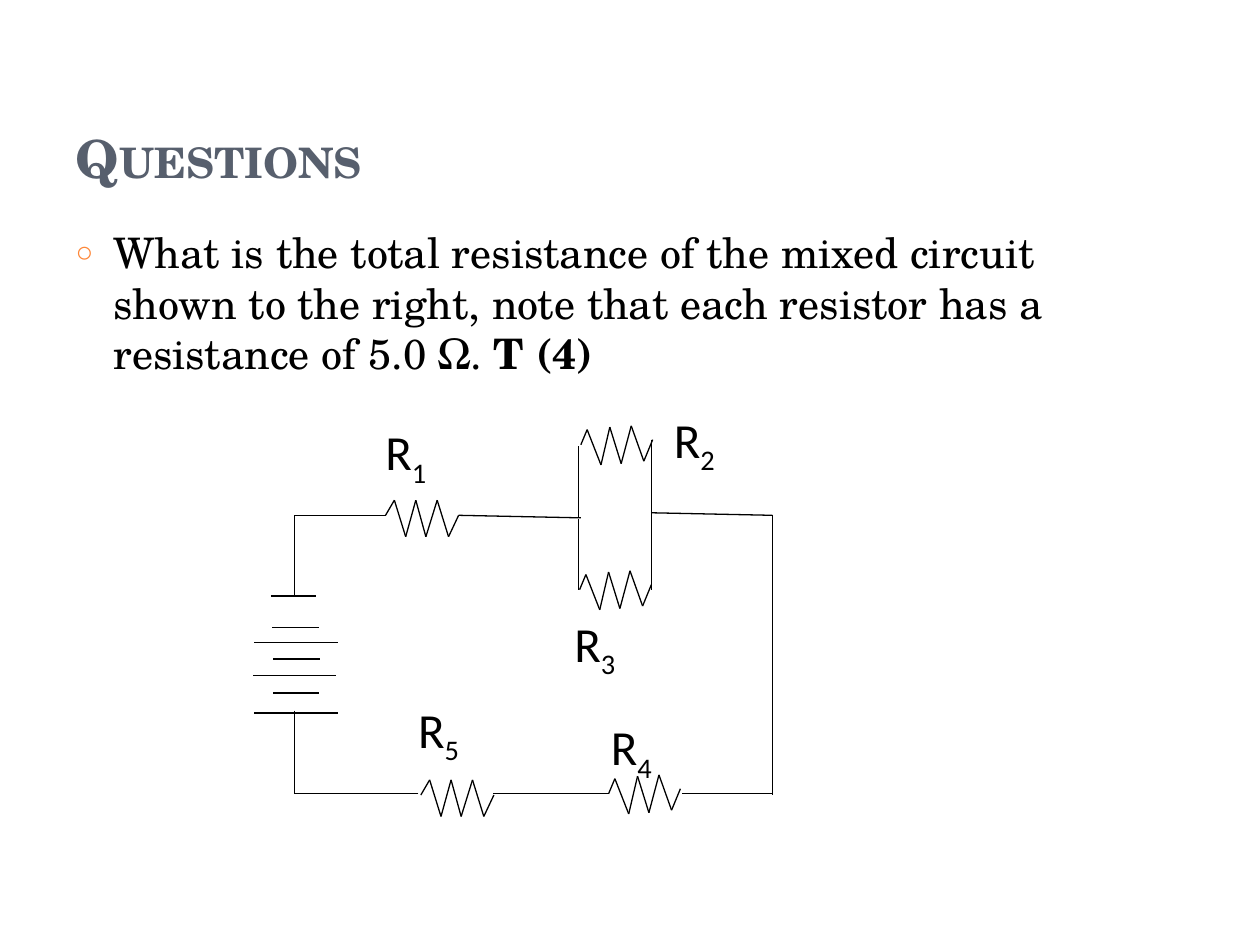
from itertools import pairwise

from lxml import etree
from pptx import Presentation
from pptx.dml.color import RGBColor
from pptx.enum import shapes, text
from pptx.oxml.ns import qn
from pptx.util import Pt

PX = 9144  # 100 px to the inch
INK = "000000"
SERIF, SANS = "TeX Gyre Schola", "Calibri"

# Content
TITLE = "Questions"
BODY = [
    ("What is the total resistance of the mixed circuit shown to the right, "
     "note that each resistor has a resistance of 5.0 Ω. ", False),
    ("T (4)", True),
]
LABELS = {"1": (296, 330), "2": (525, 320), "3": (446, 482),
          "4": (475, 564), "5": (322, 550)}
SIDE = (79, 77)

# Zigzag outlines, measured from the left end of a resistor
FLAT = [(0, 0), (7, -12), (16, 17), (24, -12), (32, 17), (41, -12), (50, 17), (58, 0)]
TILT = [(0, 0), (5, -12), (16, 16), (23, -14), (32, 15), (40, -15), (50, 13), (57, -4)]
ZIGZAGS = [(306, 409, FLAT), (461, 353, TILT), (460, 468, TILT),
           (483, 630, TILT), (334, 631, FLAT)]

# Wires as x1, y1, x2, y2
WIRES = [
    (234, 409, 306, 409), (364, 409, 461, 411),  # top
    (459, 354, 459, 410), (459, 412, 459, 468), (517, 349, 517, 468),  # branches
    (517, 407, 613, 409), (613, 409, 613, 631),  # right
    (613, 630, 541, 630), (483, 630, 391, 630), (332, 630, 234, 630),  # bottom
    (234, 409, 234, 473), (234, 564, 234, 630),  # left
]
# Battery plates as left, y, width
PLATES = [(215, 473, 36), (216, 498, 37), (202, 510, 66), (217, 523, 37),
          (201, 536, 66), (217, 550, 36), (202, 566, 66)]


def rgb(code):
    return RGBColor.from_string(code)


def px(*vals):
    return [v * PX for v in vals]


def put(obj, vals):
    for key, val in vals.items():
        setattr(obj, key, val)


def write(para, words, size, face, color=INK, bold=False):
    run = para.add_run()
    run.text = words
    put(run.font, {"size": Pt(size), "name": face, "bold": bold})
    run.font.color.rgb = rgb(color)
    return run


def place(holder, box, anchor):
    put(holder, dict(zip(("left", "top", "width", "height"), px(*box))))
    put(holder.text_frame, {"auto_size": text.MSO_AUTO_SIZE.NONE,
                            "vertical_anchor": anchor, "word_wrap": True})
    para = holder.text_frame.paragraphs[0]
    para.alignment = text.PP_ALIGN.LEFT
    return para


def line(slide, x1, y1, x2, y2):
    wire = slide.shapes.add_connector(
        shapes.MSO_CONNECTOR.STRAIGHT, *px(x1, y1, x2, y2))
    wire.line.color.rgb = rgb(INK)
    wire.line.width = Pt(0.75)
    etree.SubElement(wire._element.spPr, qn("a:effectLst"))


def bullet(para):
    props = para._p.get_or_add_pPr()
    put_xml = {"marL": px(30)[0], "indent": px(-30)[0]}
    for key, val in put_xml.items():
        props.set(key, str(val))
    tint = etree.SubElement(props, qn("a:buClr"))
    etree.SubElement(tint, qn("a:srgbClr"), val="FE8637")
    etree.SubElement(props, qn("a:buSzPct"), val="70000")
    etree.SubElement(props, qn("a:buChar"), char="○")


def label(slide, num, spot):
    box = slide.shapes.add_shape(
        shapes.MSO_SHAPE.RECTANGLE, *px(*spot, *SIDE))
    box.shadow.inherit = False
    box.fill.solid()
    box.fill.fore_color.rgb = rgb("FFFFFF")
    box.line.fill.background()
    put(box.text_frame, {"word_wrap": True,
                         "vertical_anchor": text.MSO_ANCHOR.TOP})
    para = box.text_frame.paragraphs[0]
    put(para, {"alignment": text.PP_ALIGN.LEFT, "space_after": Pt(10)})
    write(para, "R", 28, SANS)
    sub = write(para, num, 28, SANS)
    sub._r.get_or_add_rPr().set("baseline", "-25000")


def main():
    deck = Presentation()
    deck.slide_width, deck.slide_height = px(1000, 750)
    slide = deck.slides.add_slide(deck.slide_layouts[1])
    head, body = slide.placeholders

    # Title in small capitals
    para = place(head, (50, 30, 817, 125), text.MSO_ANCHOR.BOTTOM)
    run = write(para, TITLE, 30, SERIF, "575F6D", True)
    run._r.get_or_add_rPr().set("cap", "small")

    # Question
    para = place(body, (50, 175, 817, 533), text.MSO_ANCHOR.TOP)
    para.space_before = Pt(6)
    bullet(para)
    for words, bold in BODY:
        write(para, words, 24, SERIF, bold=bold)

    # Circuit
    for num, spot in LABELS.items():
        label(slide, num, spot)
    for left, top, outline in ZIGZAGS:
        for (x1, y1), (x2, y2) in pairwise(outline):
            line(slide, left + x1, top + y1, left + x2, top + y2)
    for ends in WIRES:
        line(slide, *ends)
    for left, y, width in PLATES:
        line(slide, left, y, left + width, y)

    deck.save("out.pptx")


if __name__ == "__main__":
    main()
